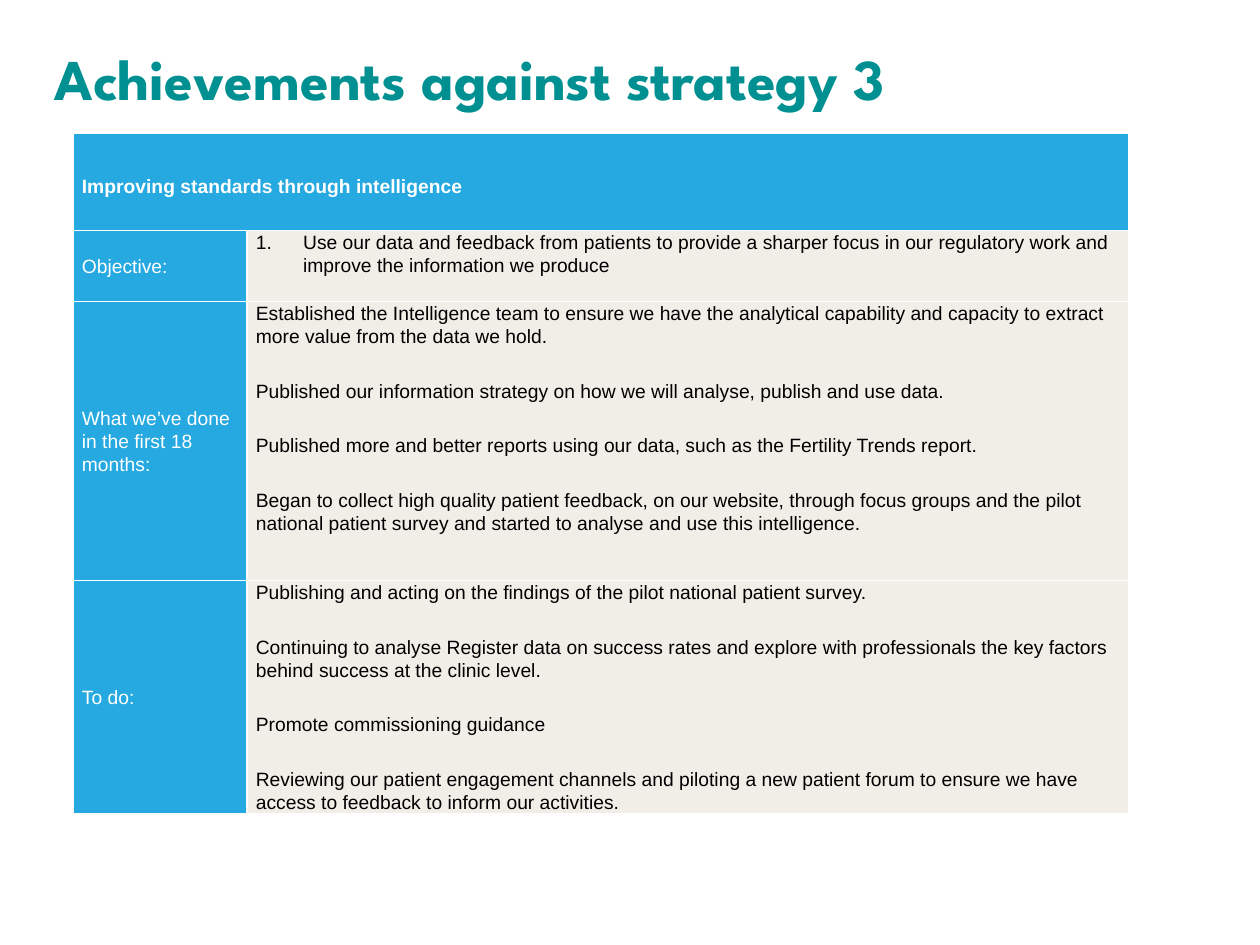
from lxml.etree import SubElement
from pptx import Presentation
from pptx.dml.color import RGBColor
from pptx.enum.text import MSO_ANCHOR as ANCHOR, MSO_AUTO_SIZE as AUTO, PP_ALIGN as ALIGN
from pptx.oxml.ns import qn
from pptx.util import Pt

TEAL, BLUE, CREAM, WHITE, BLACK = "009091", "26A9E0", "F1EDE7", "FFFFFF", "000000"
MARGINS = ("margin_left", "margin_top", "margin_right", "margin_bottom")


def rgb(value):
    return RGBColor.from_string(value)


def fill_cell(cell, texts, fill, color, anchor, bold=False, spacing=Pt(13.2), numbered=False):
    for name, value in zip(MARGINS, (5, 0, 5, 0)):
        setattr(cell, name, Pt(value))
    cell.vertical_anchor = anchor
    tcPr = cell._tc.get_or_add_tcPr()
    for side in ("lnL", "lnR", "lnT", "lnB"):
        ln = SubElement(tcPr, qn("a:" + side), w=str(Pt(1)))
        SubElement(SubElement(ln, qn("a:solidFill")), qn("a:srgbClr"), val=WHITE)
    cell.fill.solid()
    cell.fill.fore_color.rgb = rgb(fill)
    tf = cell.text_frame
    for i, text in enumerate(texts):
        p = tf.add_paragraph() if i else tf.paragraphs[0]
        p.line_spacing = spacing
        if i:
            p.space_before = Pt(12)
        if i < len(texts) - 1:
            p.space_after = Pt(6)
        if numbered:
            pPr = p._p.get_or_add_pPr()
            pPr.set("marL", str(Pt(27)))
            pPr.set("indent", str(-Pt(27)))
            SubElement(pPr, qn("a:buAutoNum"), type="arabicPeriod")
        r = p.add_run()
        r.text = text
        for name, value in {"name": "Arial", "size": Pt(11), "bold": bold}.items():
            setattr(r.font, name, value)
        r.font.color.rgb = rgb(color)


prs = Presentation()
prs.slide_width, prs.slide_height = Pt(720), Pt(540)
s = prs.slides.add_slide(prs.slide_layouts[5])

# Title
sp = s.shapes.title
sp.left, sp.top, sp.width, sp.height = Pt(31), Pt(31), Pt(657), Pt(34.6)
tf = sp.text_frame
for name in MARGINS:
    setattr(tf, name, 0)
tf.word_wrap = True
tf.auto_size = AUTO.SHAPE_TO_FIT_TEXT
tf.vertical_anchor = ANCHOR.TOP
p = tf.paragraphs[0]
p.alignment = ALIGN.LEFT
p.line_spacing = Pt(33)
r = p.add_run()
r.text = "Achievements against strategy 3"
for name, value in {"name": "League Spartan", "size": Pt(33), "bold": True}.items():
    setattr(r.font, name, value)
r.font.color.rgb = rgb(TEAL)

# Table grid
rows = [
    ("Objective:", [
        "Use our data and feedback from patients to provide a sharper focus in our "
        "regulatory work and improve the information we produce",
    ]),
    ("What we’ve done in the first 18 months:", [
        "Established the Intelligence team to ensure we have the analytical capability "
        "and capacity to extract more value from the data we hold.",
        "Published our information strategy on how we will analyse, publish and use data.",
        "Published more and better reports using our data, such as the Fertility Trends report.",
        "Began to collect high quality patient feedback, on our website, through focus groups "
        "and the pilot national patient survey and started to analyse and use this intelligence.",
    ]),
    ("To do:", [
        "Publishing and acting on the findings of the pilot national patient survey.",
        "Continuing to analyse Register data on success rates and explore with professionals "
        "the key factors behind success at the clinic level.",
        "Promote commissioning guidance",
        "Reviewing our patient engagement channels and piloting a new patient forum to ensure "
        "we have access to feedback to inform our activities.",
    ]),
]
widths, heights = (99.4, 504), (55.5, 40.5, 159.6, 133.4)
table = s.shapes.add_table(len(heights), len(widths), Pt(41.8), Pt(76.2),
                           Pt(sum(widths)), Pt(sum(heights))).table
table.first_row = table.horz_banding = False
for column, width in zip(table.columns, widths):
    column.width = Pt(width)
for row, height in zip(table.rows, heights):
    row.height = Pt(height)

# Heading across both columns, then a label and its text in each row
heading = table.cell(0, 0)
heading.merge(table.cell(0, 1))
fill_cell(heading, ["Improving standards through intelligence"], BLUE, WHITE,
          ANCHOR.MIDDLE, bold=True, spacing=1.5)
for i, (label, texts) in enumerate(rows, 1):
    fill_cell(table.cell(i, 0), [label], BLUE, WHITE, ANCHOR.MIDDLE)
    fill_cell(table.cell(i, 1), texts, CREAM, BLACK, ANCHOR.TOP, numbered=(i == 1))

prs.save("out.pptx")
